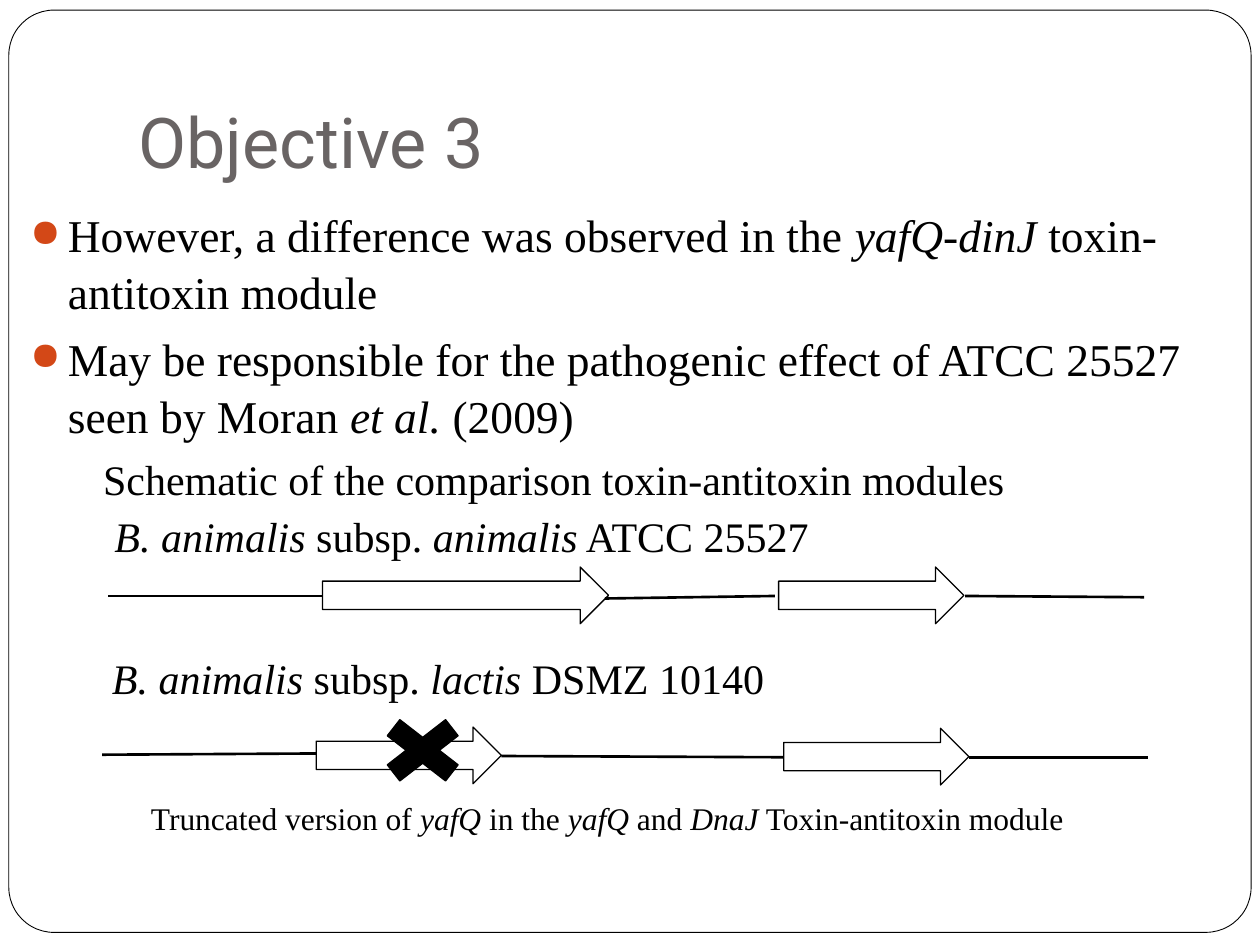
from dataclasses import dataclass

from lxml.etree import SubElement
from pptx import Presentation
from pptx.dml.color import RGBColor
from pptx.enum.shapes import MSO_CONNECTOR, MSO_SHAPE
from pptx.enum.text import MSO_ANCHOR, PP_ALIGN
from pptx.oxml.ns import qn
from pptx.util import Inches, Pt


@dataclass
class Theme:
    ink: str = "000000"
    paper: str = "FFFFFF"
    grey: str = "696464"
    accent: str = "D34817"
    head: str = "Roboto"
    body: str = "Times New Roman"
    title: float = 40
    point: float = 26
    label: float = 24
    note: float = 18


class Deck:
    """Holds the theme and the current slide."""

    def __init__(self, theme):
        self.theme = theme
        self.file = Presentation()
        self.file.slide_width, self.file.slide_height = Inches(10), Inches(7.5)
        self.slide = self.file.slides.add_slide(self.file.slide_layouts[5])

    def style(self, run, size, face, color, italic=False):
        for key, value in {"size": Pt(size), "name": face, "italic": italic}.items():
            setattr(run.font, key, value)
        run.font.color.rgb = RGBColor.from_string(color)

    def add_runs(self, para, text, size):
        """Add runs; words between asterisks are italic."""
        for i, part in enumerate(text.split("*")):
            if part:
                run = para.add_run()
                run.text = part
                self.style(run, size, self.theme.body, self.theme.ink, i % 2 == 1)

    def title(self, text, box):
        shape = self.slide.shapes.title
        sides = ("left", "top", "width", "height")
        for key, value in zip(sides, box):
            setattr(shape, key, Inches(value))
        frame = shape.text_frame
        look = {
            "vertical_anchor": MSO_ANCHOR.BOTTOM,
            "margin_bottom": Inches(0.1),
            "word_wrap": True,
        }
        for key, value in look.items():
            setattr(frame, key, value)
        para = frame.paragraphs[0]
        para.alignment = PP_ALIGN.LEFT
        run = para.add_run()
        run.text = text
        self.style(run, self.theme.title, self.theme.head, self.theme.grey)

    def text(self, text, box, size, align=PP_ALIGN.LEFT):
        frame = self.slide.shapes.add_textbox(*map(Inches, box)).text_frame
        frame.word_wrap = True
        para = frame.paragraphs[0]
        para.alignment = align
        self.add_runs(para, text, size)

    def bullets(self, items, box):
        frame = self.slide.shapes.add_textbox(*map(Inches, box)).text_frame
        frame.word_wrap = True
        for i, item in enumerate(items):
            para = frame.add_paragraph() if i else frame.paragraphs[0]
            para.space_before = Pt(5.8)
            para.line_spacing = 1.04
            self.add_runs(para, item, self.theme.point)
            # Hanging indent and coloured dot
            props = para._p.get_or_add_pPr()
            props.set("marL", str(Inches(0.3)))
            props.set("indent", str(-Inches(0.3)))
            color = SubElement(props, qn("a:buClr"))
            SubElement(color, qn("a:srgbClr"), val=self.theme.accent)
            SubElement(props, qn("a:buSzPct"), val="85000")
            SubElement(props, qn("a:buChar"), char="●")

    def shape(self, kind, box, fill, width=0.75):
        shape = self.slide.shapes.add_shape(kind, *map(Inches, box))
        shape.shadow.inherit = False
        shape.fill.solid()
        shape.fill.fore_color.rgb = RGBColor.from_string(fill)
        shape.line.color.rgb = RGBColor.from_string(self.theme.ink)
        shape.line.width = Pt(width)
        return shape

    def border(self, box):
        shape = self.shape(MSO_SHAPE.ROUNDED_RECTANGLE, box, self.theme.paper, 0.5)
        shape.adjustments[0] = 0.049
        # Keep the border behind the title
        self.slide.shapes.title.element.addprevious(shape.element)

    def gene(self, left, top, width):
        self.shape(MSO_SHAPE.RIGHT_ARROW, (left, top, width, 0.45), self.theme.paper)

    def line(self, *ends):
        line = self.slide.shapes.add_connector(
            MSO_CONNECTOR.STRAIGHT, *map(Inches, ends))
        line.line.color.rgb = RGBColor.from_string(self.theme.ink)
        line.line.width = Pt(1.5)
        SubElement(line.element.spPr, qn("a:effectLst"))


def main():
    theme = Theme()
    deck = Deck(theme)

    # Frame, title and main points
    deck.border((0.07, 0.08, 9.86, 7.32))
    deck.title("Objective 3", (1, 0.3, 8.5, 1.25))
    deck.bullets([
        "However, a difference was observed in the *yafQ-dinJ* toxin-antitoxin module",
        "May be responsible for the pathogenic effect of ATCC 25527 "
        "seen by Moran *et al.* (2009)",
    ], (0.14, 1.58, 9.61, 1.75))

    # Gene maps: label, arrows, then linking lines
    maps = [
        ("*B. animalis* subsp. *animalis* ATCC 25527", (0.81, 4, 7.92, 0.33),
         [(2.56, 4.5, 2.27), (6.18, 4.5, 1.47)],
         [(0.86, 4.73, 2.56, 4.73), (4.8, 4.75, 6.15, 4.73),
          (7.66, 4.73, 9.08, 4.74)]),
        ("*B. animalis* subsp. *lactis* DSMZ 10140", (0.79, 5.13, 7.17, 0.33),
         [(2.51, 5.77, 1.47), (6.22, 5.78, 1.47)],
         [(0.81, 5.99, 2.51, 5.98), (3.98, 6, 6.22, 6.01),
          (7.69, 6.01, 9.11, 6.01)]),
    ]
    for label, box, genes, links in maps:
        for gene in genes:
            deck.gene(*gene)
        for link in links:
            deck.line(*link)
        deck.text(label, box, theme.label)

    # Cross on the truncated gene
    deck.shape(MSO_SHAPE.MATH_MULTIPLY, (2.91, 5.61, 0.89, 0.69), theme.ink)

    # Caption and heading of the maps
    deck.text("Truncated version of *yafQ* in the *yafQ* and *DnaJ* "
              "Toxin-antitoxin module",
              (0.14, 6.29, 9.36, 0.79), theme.note, PP_ALIGN.CENTER)
    deck.text("Schematic of the comparison toxin-antitoxin modules",
              (0.72, 3.55, 8.29, 0.91), theme.label)

    deck.file.save("out.pptx")


if __name__ == "__main__":
    main()
